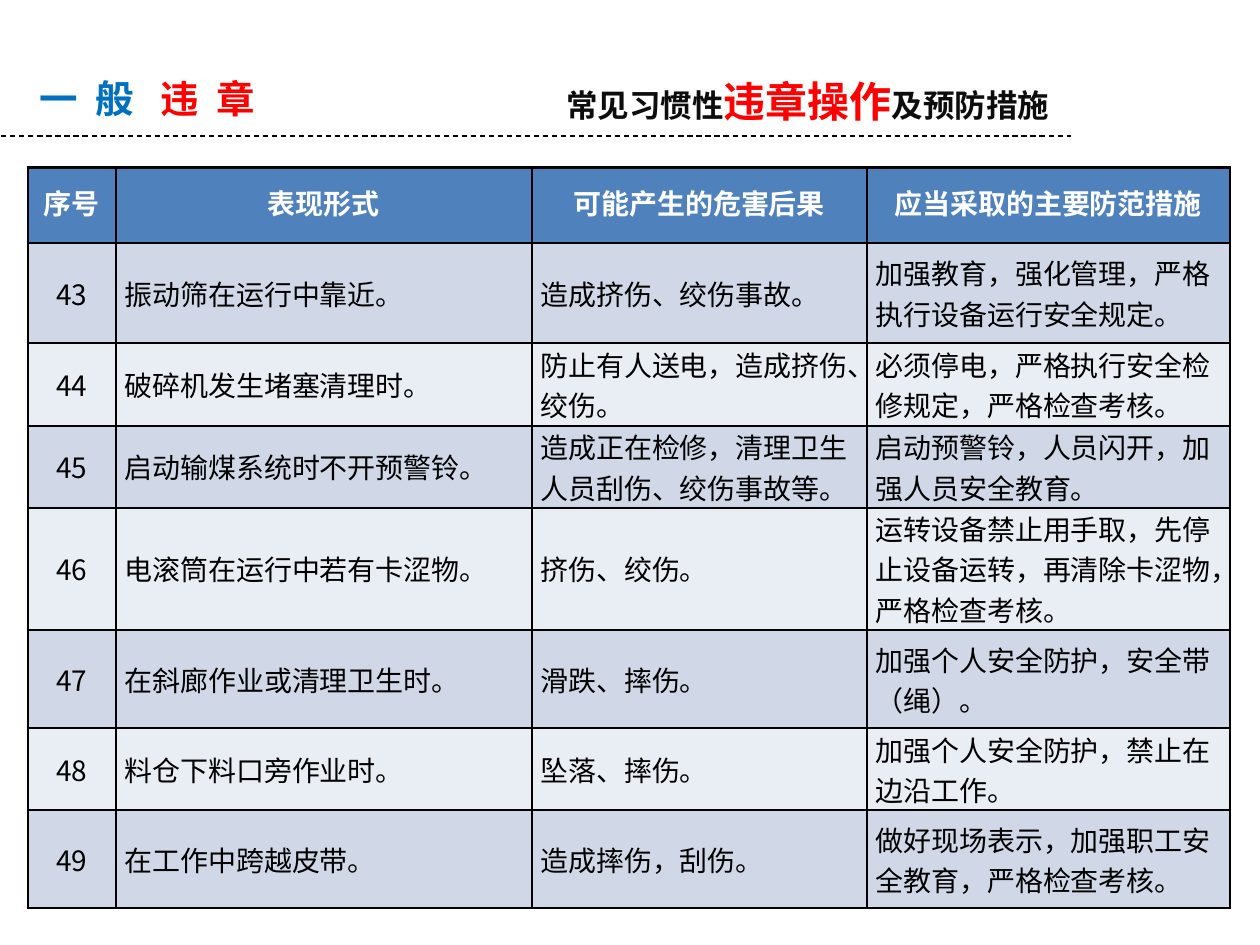
"""Build a slide listing common rule violations, their hazards and the preventive measures."""
import pptx
import pptx.dml.color
import pptx.enum.dml
import pptx.enum.shapes
import pptx.enum.text
import pptx.oxml
import pptx.oxml.ns
import pptx.util

Inches, Pt = pptx.util.Inches, pptx.util.Pt
CENTER, LEFT = pptx.enum.text.PP_ALIGN.CENTER, pptx.enum.text.PP_ALIGN.LEFT
MIDDLE = pptx.enum.text.MSO_ANCHOR.MIDDLE
CJK = "Noto Sans CJK SC"

HEADINGS = [
    ((0, 0.55, 2.34, 0.47), [
        ("一 般", 22, "0070C0", 250), (" ", 22, "0070C0", 750), ("违 章", 22, "FF0000", 250)]),
    ((4.38, 0.55, 4.06, 0.35), [
        ("常见习惯性", 18, "0D0D0D", 0), ("违章操作", 24, "FF0000", 0), ("及预防措施", 18, "0D0D0D", 0)]),
]
COLUMNS = [("序号", 0.7), ("表现形式", 3.3), ("可能产生的危害后果", 2.66), ("应当采取的主要防范措施", 2.88)]
FIRST_NUMBER = 43
VIOLATIONS = [
    ("振动筛在运行中靠近。", "造成挤伤、绞伤事故。", "加强教育，强化管理，严格执行设备运行安全规定。"),
    ("破碎机发生堵塞清理时。", "防止有人送电，造成挤伤、绞伤。", "必须停电，严格执行安全检修规定，严格检查考核。"),
    ("启动输煤系统时不开预警铃。", "造成正在检修，清理卫生人员刮伤、绞伤事故等。",
     "启动预警铃，人员闪开，加强人员安全教育。"),
    ("电滚筒在运行中若有卡涩物。", "挤伤、绞伤。", "运转设备禁止用手取，先停止设备运转，再清除卡涩物，严格检查考核。"),
    ("在斜廊作业或清理卫生时。", "滑跌、摔伤。", "加强个人安全防护，安全带（绳）。"),
    ("料仓下料口旁作业时。", "坠落、摔伤。", "加强个人安全防护，禁止在边沿工作。"),
    ("在工作中跨越皮带。", "造成摔伤，刮伤。", "做好现场表示，加强职工安全教育，严格检查考核。"),
]
ROW_HEIGHTS = [0.6, 0.79, 0.66, 0.65, 0.97, 0.78, 0.65, 0.78]
HEADER_FILL, BAND_FILLS = "4F81BD", ("D0D8E8", "E9EDF4")
HEADER_FORMAT = {"size": Pt(16), "name": "Calibri", "bold": True}
NUMBER_FORMAT = {"size": Pt(16), "name": CJK, "bold": False}
BODY_FORMAT = {"size": Pt(16), "name": "Times New Roman", "bold": False}


def rgb(color):
    return pptx.dml.color.RGBColor.from_string(color)


def add_run(paragraph, text, font_format, color, spacing=0):
    run = paragraph.add_run()
    run.text = text
    for key, value in font_format.items():
        setattr(run.font, key, value)
    run.font.color.rgb = rgb(color)
    properties = run._r.get_or_add_rPr()
    if spacing:
        properties.set("spc", str(spacing))
    east_asian = pptx.oxml.parse_xml(f'<a:ea {pptx.oxml.ns.nsdecls("a")} typeface="{CJK}"/>')
    properties.find(pptx.oxml.ns.qn("a:latin")).addnext(east_asian)


def add_heading(slide, place, parts):
    frame = slide.shapes.add_textbox(*map(Inches, place)).text_frame
    layout = {"word_wrap": True, "margin_left": 0, "margin_right": 0,
              "margin_top": Inches(0.05), "margin_bottom": 0}
    for key, value in layout.items():
        setattr(frame, key, value)
    paragraph = frame.paragraphs[0]
    paragraph.alignment = CENTER
    for text, size, color, spacing in parts:
        add_run(paragraph, text, {"size": Pt(size), "name": CJK, "bold": True}, color, spacing)


def add_rule(slide):
    rule = slide.shapes.add_connector(
        pptx.enum.shapes.MSO_CONNECTOR.STRAIGHT, *map(Inches, (0.01, 1.08, 8.5, 1.08)))
    rule.line.color.rgb = rgb("000000")
    rule.line.width = Pt(0.75)
    rule.line.dash_style = pptx.enum.dml.MSO_LINE.DASH
    rule._element.spPr.append(pptx.oxml.parse_xml(f'<a:effectLst {pptx.oxml.ns.nsdecls("a")}/>'))


def fill_cell(cell, text, fill, is_header, is_number):
    side, end = (0.04, 0.04) if is_header else (0.07, 0)
    layout = {"margin_left": Inches(side), "margin_right": Inches(side), "margin_top": Inches(end),
              "margin_bottom": Inches(end), "vertical_anchor": MIDDLE}
    for key, value in layout.items():
        setattr(cell, key, value)
    paragraph = cell.text_frame.paragraphs[0]
    paragraph.alignment = CENTER if is_header or is_number else LEFT
    if is_header:
        paragraph.line_spacing = Pt(19.2)
    font_format = HEADER_FORMAT if is_header else NUMBER_FORMAT if is_number else BODY_FORMAT
    add_run(paragraph, text, font_format, "FFFFFF" if is_header else "000000")
    properties = cell._tc.get_or_add_tcPr()
    for edge in ("lnL", "lnR", "lnT", "lnB"):
        properties.append(pptx.oxml.parse_xml(
            f'<a:{edge} {pptx.oxml.ns.nsdecls("a")} w="{Pt(1.5)}"><a:solidFill>'
            f'<a:srgbClr val="000000"/></a:solidFill></a:{edge}>'))
    cell.fill.solid()
    cell.fill.fore_color.rgb = rgb(fill)


def add_violations(slide):
    titles, widths = zip(*COLUMNS)
    rows = [titles] + [(str(FIRST_NUMBER + i), *row) for i, row in enumerate(VIOLATIONS)]
    place = (0.22, 1.33, sum(widths), sum(ROW_HEIGHTS))
    table = slide.shapes.add_table(len(rows), len(titles), *map(Inches, place)).table
    for column, width in zip(table.columns, widths):
        column.width = Inches(width)
    for r, (row, height) in enumerate(zip(rows, ROW_HEIGHTS)):
        table.rows[r].height = Inches(height)
        fill = BAND_FILLS[(r - 1) % 2] if r else HEADER_FILL
        for c, text in enumerate(row):
            fill_cell(table.cell(r, c), text, fill, r == 0, c == 0)


def main():
    deck = pptx.Presentation()
    deck.slide_width, deck.slide_height = Inches(10), Inches(7.5)
    slide = deck.slides.add_slide(deck.slide_layouts[6])
    add_rule(slide)
    for place, parts in HEADINGS:
        add_heading(slide, place, parts)
    add_violations(slide)
    deck.save("out.pptx")


if __name__ == "__main__":
    main()
